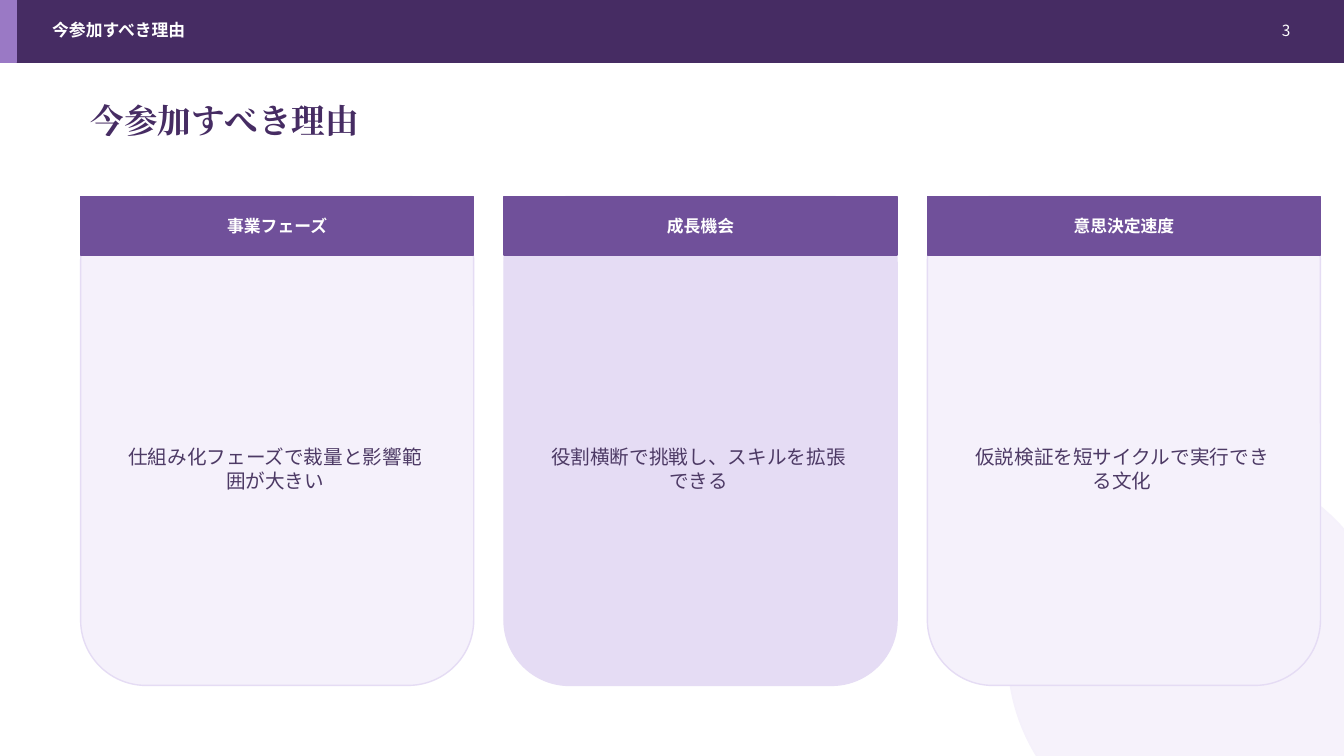
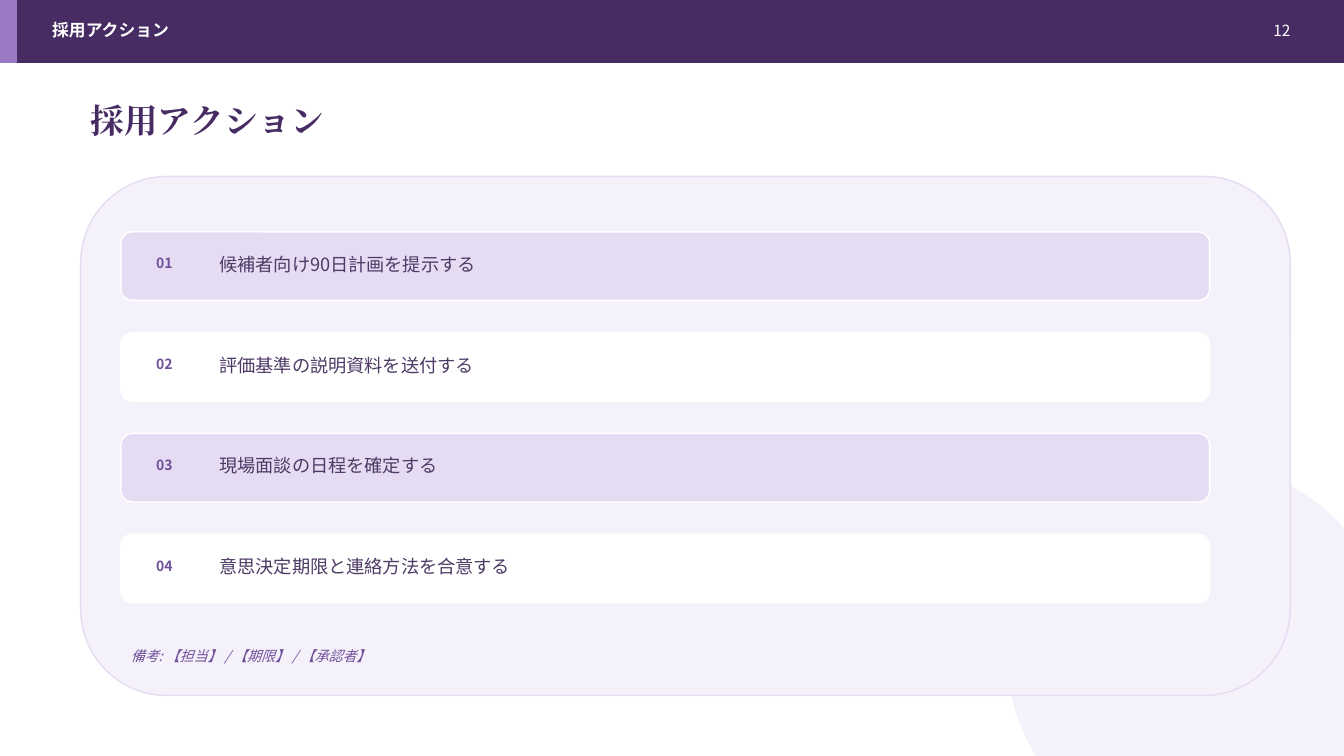
from dataclasses import dataclass
from typing import Optional

from lxml.etree import SubElement
from pptx import Presentation
from pptx.dml.color import RGBColor
from pptx.enum.shapes import MSO_SHAPE
from pptx.enum.text import MSO_ANCHOR, MSO_AUTO_SIZE, PP_ALIGN
from pptx.oxml.ns import qn
from pptx.presentation import Presentation as Deck
from pptx.shapes.autoshape import Shape
from pptx.slide import Slide
from pptx.util import Inches, Length, Pt

CELL = 0.1
COLS, ROWS = 133.33, 75
MARGIN = 8
BAND_H = 6.2

INK = "462C63"
BODY = "4D3A65"
PURPLE = "70509A"
ACCENT = "9A79C5"
LILAC = "E5DCF4"
PALE = "F5F1FB"
WHITE = "FFFFFF"

SANS = "Noto Sans CJK JP"
SERIF = "Cambria"


@dataclass(frozen=True)
class Box:
    col: float
    row: float
    cols: float
    rows: float

    def lengths(self) -> tuple[Length, ...]:
        return tuple(Inches(n * CELL) for n in (self.col, self.row, self.cols, self.rows))


@dataclass(frozen=True)
class Card:
    heading: str
    body: str
    fill: str


@dataclass(frozen=True)
class Step:
    text: str
    fill: str


CARDS = [
    Card("事業フェーズ", "仕組み化フェーズで裁量と影響範囲が大きい", PALE),
    Card("成長機会", "役割横断で挑戦し、スキルを拡張できる", LILAC),
    Card("意思決定速度", "仮説検証を短サイクルで実行できる文化", PALE),
]

STEPS = [
    Step("候補者向け90日計画を提示する", LILAC),
    Step("評価基準の説明資料を送付する", WHITE),
    Step("現場面談の日程を確定する", LILAC),
    Step("意思決定期限と連絡方法を合意する", WHITE),
]


def rgb(value: str) -> RGBColor:
    return RGBColor.from_string(value)


def write(sp: Shape, text: str, *, size: float, color: str, font: str = SANS,
          bold: bool = False, italic: bool = False,
          align: PP_ALIGN = PP_ALIGN.LEFT) -> None:
    tf = sp.text_frame
    tf.word_wrap = True
    tf.auto_size = MSO_AUTO_SIZE.NONE
    tf.vertical_anchor = MSO_ANCHOR.MIDDLE
    p = tf.paragraphs[0]
    p.alignment = align
    r = p.add_run()
    r.text = text
    r.font.size = Pt(size)
    r.font.bold = bold
    r.font.italic = italic
    r.font.color.rgb = rgb(color)
    r.font.name = font
    SubElement(r.font._element, qn("a:ea")).set("typeface", font)


def add_text(s: Slide, box: Box, text: str, **fmt) -> None:
    write(s.shapes.add_textbox(*box.lengths()), text, **fmt)


def add_panel(s: Slide, kind: MSO_SHAPE, box: Box, fill: str,
              line: Optional[str] = None, opacity: Optional[int] = None) -> None:
    sp = s.shapes.add_shape(kind, *box.lengths())
    sp.shadow.inherit = False
    sp.fill.solid()
    sp.fill.fore_color.rgb = rgb(fill)
    sp.line.color.rgb = rgb(line or fill)
    sp.line.width = Pt(1)
    if opacity is not None:
        color = sp._element.spPr.find(qn("a:solidFill")).find(qn("a:srgbClr"))
        SubElement(color, qn("a:alpha")).set("val", str(opacity * 1000))


def add_base_slide(prs: Deck, title: str, number: int) -> Slide:
    s = prs.slides.add_slide(prs.slide_layouts.get_by_name("Title Only"))
    add_panel(s, MSO_SHAPE.OVAL, Box(100, 46, 38, 38), PALE, opacity=88)
    add_panel(s, MSO_SHAPE.RECTANGLE, Box(0, 0, COLS, BAND_H), INK)
    add_panel(s, MSO_SHAPE.RECTANGLE, Box(0, 0, 1.6, BAND_H), ACCENT)
    add_text(s, Box(4.2, 1.7, 88, 2.6), title, size=12, color=WHITE, bold=True)
    add_text(s, Box(121.5, 1.7, 7.5, 2.6), str(number), size=11, color=WHITE,
             align=PP_ALIGN.RIGHT)
    heading = s.shapes.title
    heading.left, heading.top, heading.width, heading.height = Box(
        MARGIN, 9.5, 114, 4.8).lengths()
    write(heading, title, size=24, color=INK, font=SERIF, bold=True)
    return s


def add_card(s: Slide, card: Card, col: float, width: float) -> None:
    top = 19.5
    add_panel(s, MSO_SHAPE.ROUNDED_RECTANGLE, Box(col, top, width, 48.5), card.fill, LILAC)
    add_panel(s, MSO_SHAPE.RECTANGLE, Box(col, top, width, 5.8), PURPLE)
    add_text(s, Box(col + 2, top + 1.7, width - 4, 2.4), card.heading, size=12,
             color=WHITE, bold=True, align=PP_ALIGN.CENTER)
    add_text(s, Box(col + 2.8, top + 9.5, width - 6, 35), card.body, size=14,
             color=BODY, align=PP_ALIGN.CENTER)


def add_step(s: Slide, step: Step, number: int, row: float) -> None:
    add_panel(s, MSO_SHAPE.ROUNDED_RECTANGLE, Box(12, row, 108, 6.8), step.fill, WHITE)
    add_text(s, Box(14.5, row + 2.1, 4.4, 2), f"{number:02d}", size=10,
             color=PURPLE, bold=True)
    add_text(s, Box(20.8, row + 2, 96, 2.4), step.text, size=13, color=BODY)


def build_reasons(prs: Deck) -> None:
    s = add_base_slide(prs, "今参加すべき理由", 3)
    width, gap = 39, 3
    for i, card in enumerate(CARDS):
        add_card(s, card, MARGIN + i * (width + gap), width)


def build_actions(prs: Deck) -> None:
    s = add_base_slide(prs, "採用アクション", 12)
    add_panel(s, MSO_SHAPE.ROUNDED_RECTANGLE, Box(MARGIN, 17.5, 120, 51.5), PALE, LILAC)
    first_row, pitch = 23, 10
    for i, step in enumerate(STEPS):
        add_step(s, step, i + 1, first_row + i * pitch)
    add_text(s, Box(12, 64, 68, 2.2), "備考: 【担当】 / 【期限】 / 【承認者】",
             size=10, color=PURPLE, italic=True)


def main() -> None:
    prs = Presentation()
    prs.slide_width = Inches(COLS * CELL)
    prs.slide_height = Inches(ROWS * CELL)
    build_reasons(prs)
    build_actions(prs)
    prs.save("out.pptx")


if __name__ == "__main__":
    main()
